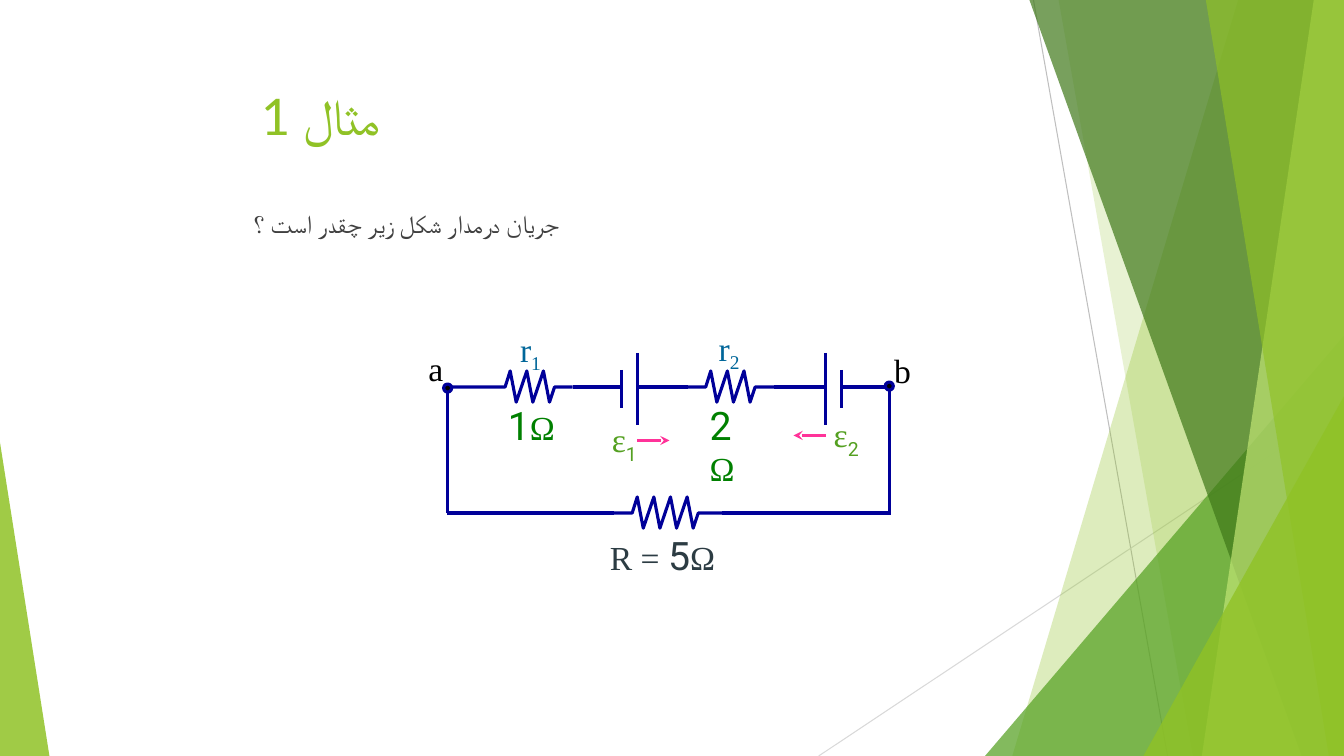
import pptx
import pptx.util
import pptx.dml.color
import pptx.enum.shapes
import pptx.enum.text
import pptx.oxml
import pptx.oxml.ns

Inches = pptx.util.Inches
Pt = pptx.util.Pt
SHAPE = pptx.enum.shapes.MSO_SHAPE
STRAIGHT = pptx.enum.shapes.MSO_CONNECTOR.STRAIGHT
ANCHOR = pptx.enum.text.MSO_ANCHOR
qn = pptx.oxml.ns.qn

COLORS = {
    "lime": "90C226", "green": "54A021", "forest": "3F7819", "pale": "C0E474",
    "gray": "BFBFBF", "light gray": "D9D9D9", "body": "404040", "wire": "000099",
    "arrow": "FF3399", "inner": "006699", "outer": "2C3C43", "ohm": "008000",
    "black": "000000",
}
SERIF, SANS, HEADING = "Times New Roman", "Roboto", "Lato"


def rgb(name):
    return pptx.dml.color.RGBColor.from_string(COLORS[name])


def add_child(parent, tag, **attributes):
    child = pptx.oxml.parse_xml(f"<a:{tag} {pptx.oxml.ns.nsdecls('a')}/>")
    for key, value in attributes.items():
        child.set(key, str(value))
    parent.append(child)
    return child


def paint(shape, color, opacity):
    """Fill a shape without outline, opacity in percent."""
    shape.shadow.inherit = False
    shape.fill.solid()
    shape.fill.fore_color.rgb = rgb(color)
    add_child(shape.fill._xPr.find(qn("a:solidFill"))[0], "alpha", val=opacity * 1000)
    shape.line.fill.background()


def add_line(slide, start, end, color, width, arrow=False):
    line = slide.shapes.add_connector(STRAIGHT, *map(Inches, (*start, *end)))
    line.line.color.rgb = rgb(color)
    line.line.width = Pt(width)
    if arrow:
        add_child(line.line._get_or_add_ln(), "tailEnd", type="stealth")
    add_child(line._element.spPr, "effectLst")


def add_path(slide, points, close):
    corners = [(Inches(x), Inches(y)) for x, y in points]
    builder = slide.shapes.build_freeform(*corners[0], scale=1.0)
    builder.add_line_segments(corners[1:], close=close)
    path = builder.convert_to_shape()
    path.shadow.inherit = False
    return path


def add_triangle(slide, left, top, width, height, apex, color, opacity):
    triangle = slide.shapes.add_shape(
        SHAPE.ISOSCELES_TRIANGLE, *map(Inches, (left, top, width, height)))
    triangle.adjustments[0] = apex
    paint(triangle, color, opacity)


def add_facets(slide, width, height):
    """Translucent green facets along the left and right edges."""
    def band(top_x, bottom_x, color, opacity):
        corners = [(top_x, 0), (width, 0), (width, height), (bottom_x, height)]
        paint(add_path(slide, corners, close=True), color, opacity)

    add_line(slide, (10.25, 0), (11.58, height), "gray", 0.75)
    add_line(slide, (width, 4.03), (8.12, height), "light gray", 0.75)
    band(12.28, 10.04, "lime", 30)
    band(10.5, 11.83, "lime", 20)
    add_triangle(slide, width - 3.56, height - 4.17, 3.56, 4.17, 1, "green", 72)
    band(10.21, 12.91, "forest", 70)
    band(13.03, 11.92, "pale", 70)
    band(11.96, 13.18, "lime", 65)
    add_triangle(slide, width - 1.99, height - 3.57, 1.99, 3.57, 1, "lime", 80)
    add_triangle(slide, 0, height - 3.11, 0.49, 3.11, 0, "lime", 85)


def fill_placeholder(holder, box, text, size, color, script_font):
    """Place a heading or question in front of the facets."""
    holder.left, holder.top, holder.width, holder.height = map(Inches, box)
    frame = holder.text_frame
    frame.text = text
    frame.vertical_anchor = ANCHOR.TOP
    paragraph = frame.paragraphs[0]
    paragraph.alignment = pptx.enum.text.PP_ALIGN.LEFT
    run = paragraph.runs[0]
    run.font.size = Pt(size)
    run.font.name = HEADING
    run.font.color.rgb = rgb(color)
    add_child(run._r.get_or_add_rPr(), "cs", typeface=script_font)
    holder._element.getparent().append(holder._element)
    return paragraph


def add_label(slide, left, top, width, height, color, parts, wrap=False):
    """Write parts of (text, font, size, subscript) on one line."""
    label = slide.shapes.add_textbox(*map(Inches, (left, top, width, height)))
    label.text_frame.word_wrap = wrap
    for text, font, size, subscript in parts:
        run = label.text_frame.paragraphs[0].add_run()
        run.text = text
        run.font.name = font
        run.font.size = Pt(size)
        run.font.color.rgb = rgb(color)
        if subscript:
            run._r.get_or_add_rPr().set("baseline", "-25000")


def add_circuit(slide, left, top):
    def at(x, y):
        return left + x, top + y

    def wire(start, end):
        add_line(slide, at(*start), at(*end), "wire", 2.25)

    def resistor(start, first, end, y, teeth):
        points = [(start, y), (first, y)]
        for tooth in range(teeth):
            peak = first + 0.05 + 0.165 * tooth
            points += [(peak, y - 0.16), (peak + 0.06, y + 0.15)]
        points += [(points[-1][0] + 0.05, y), (end, y)]
        zigzag = add_path(slide, [at(*point) for point in points], close=False)
        zigzag.fill.background()
        zigzag.line.color.rgb = rgb("wire")
        zigzag.line.width = Pt(2.25)

    middle, bottom = 0.64, 1.89
    for start, end in [(1.53, 2.01), (2.17, 2.67), (3.53, 4.04), (4.2, 4.67)]:
        wire((start, middle), (end, middle))
    for x, half in [(2.01, 0.19), (2.17, 0.36), (4.04, 0.36), (4.2, 0.19)]:
        wire((x, middle + 0.02 - half), (x, middle + 0.02 + half))
    for x in (0.29, 4.67):
        wire((x, middle), (x, bottom))
    for start, end in [(0.28, 1.94), (3.01, 4.69)]:
        wire((start, bottom), (end, bottom))
    resistor(0.29, 0.86, 1.53, middle, 3)
    resistor(2.66, 2.85, 3.53, middle, 3)
    resistor(1.92, 2.12, 3.01, bottom, 4)

    for start, end, y in [(2.17, 2.49, 1.17), (4.04, 3.72, 1.12)]:
        add_line(slide, at(start, y), at(end, y), "arrow", 2.25, arrow=True)

    for x, y in [(0.29, 0.65), (4.67, 0.63)]:
        node = slide.shapes.add_shape(
            SHAPE.OVAL, *map(Inches, at(x - 0.04, y - 0.04)), Inches(0.08), Inches(0.08))
        node.shadow.inherit = False
        node.fill.solid()
        node.fill.fore_color.rgb = rgb("black")
        node.line.color.rgb = rgb("wire")
        node.line.width = Pt(2.25)

    for name, x, y in [("a", 0, 0.2), ("b", 4.62, 0.22)]:
        add_label(slide, *at(x, y), 0.36, 0.5, "black", [(name, SERIF, 24, False)])
    for index, x, y in [("1", 0.91, 0.01), ("2", 2.88, 0)]:
        add_label(slide, *at(x, y), 0.43, 0.5, "inner",
                  [("r", SERIF, 24, False), (index, SERIF, 24, True)])
    for index, x, y in [("1", 1.82, 0.91), ("2", 4.02, 0.86)]:
        add_label(slide, *at(x, y), 0.47, 0.51, "green",
                  [("ε", SERIF, 24, False), (index, SANS, 24, True)])
    for value, x, wrap in [("1", 0.79, False), ("2", 2.79, True)]:
        add_label(slide, *at(x, 0.73), 0.62 if wrap else 0.67, 0.57, "ohm",
                  [(value, SANS, 28, False), ("Ω", SERIF, 24, False)], wrap)
    add_label(slide, *at(1.8, 2.02), 1.25, 0.57, "outer",
              [("R = ", SERIF, 24, False), ("5", SANS, 28, False), ("Ω", SERIF, 24, False)])


def main():
    deck = pptx.Presentation()
    width, height = 13.33, 7.5
    deck.slide_width, deck.slide_height = Inches(width), Inches(height)
    slide = deck.slides.add_slide(deck.slide_layouts[1])
    add_facets(slide, width, height)
    fill_placeholder(slide.shapes.title, (2.49, 0.79, 8.75, 0.92),
                     "مثال 1", 36, "lime", HEADING)
    question = fill_placeholder(slide.placeholders[1], (2.41, 2.02, 8.5, 0.68),
                                "جريان درمدار شكل زير چقدر است ؟", 18, "body", SERIF)
    question.space_before = Pt(10)
    properties = question._p.get_or_add_pPr()
    properties.set("marL", str(Inches(0.38)))
    properties.set("indent", str(Inches(-0.38)))
    add_child(properties, "buNone")
    add_circuit(slide, 4.15, 3.2)
    deck.save("out.pptx")


if __name__ == "__main__":
    main()
